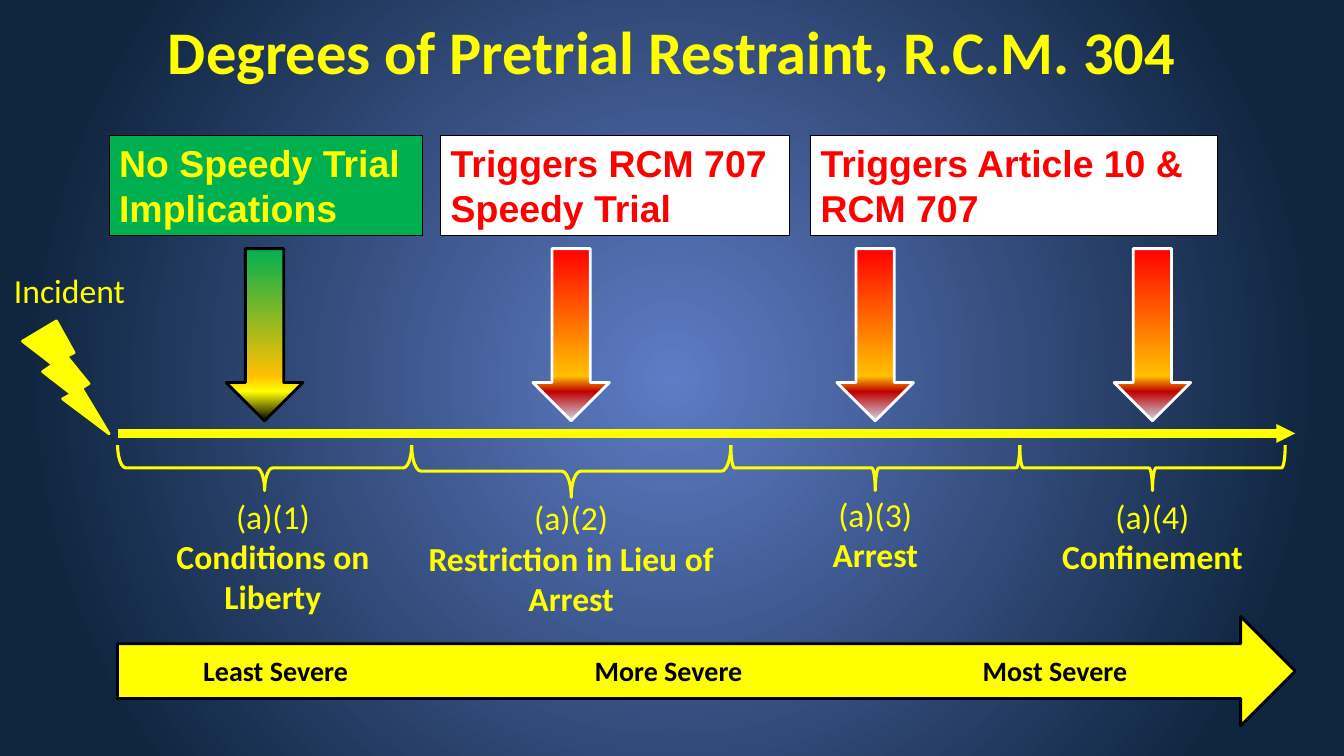
from collections import namedtuple

from lxml import etree
from pptx import Presentation
from pptx import util as u
from pptx.dml import color
from pptx.enum import shapes, text
from pptx.oxml import ns

COLUMNS, ROWS = 80, 45
CELL = u.Inches(1) // 6
YELLOW, BLACK, WHITE, RED, GREEN = "FFFF00", "000000", "FFFFFF", "FF0000", "00B050"
HOT = [(0, RED), (74, "FFC000"), (83, "C00000"), (100, "CAD9EB")]
CALM = [(0, GREEN), (74, "FFC000"), (83, YELLOW), (100, BLACK)]

Box = namedtuple("Box", "left top width height")
Trigger = namedtuple("Trigger", "lines left width fill ink")
Stage = namedtuple("Stage", "rule name start end depth curve shift label_top label_width stops edge")

TRIGGERS = [
    Trigger(["No Speedy Trial", "Implications"], 0, 18.66, GREEN, YELLOW),
    Trigger(["Triggers RCM 707", "Speedy Trial"], 19.74, 20.76, WHITE, RED),
    Trigger(["Triggers Article 10 &", "RCM 707"], 41.76, 24.24, WHITE, RED),
]
STAGES = [
    Stage("(a)(1)", "Conditions on Liberty", 0, 17.5, 2.7, 0.18, 0.5, 14.4, 15, CALM, BLACK),
    Stage("(a)(2)", "Restriction in Lieu of Arrest", 17.5, 36.5, 3.1, 0.18, 0, 14.5, 21, HOT, WHITE),
    Stage("(a)(3)", "Arrest", 36.5, 53.7, 2.7, 0.08, 0, 14.3, 12, HOT, WHITE),
    Stage("(a)(4)", "Confinement", 53.7, 69.5, 2.7, 0.08, 0, 14.4, 15, HOT, WHITE),
]


def rgb(value):
    """Turn a hex string into a colour."""
    return color.RGBColor.from_string(value)


def emu(*cells):
    """Turn grid cells into slide lengths."""
    return [round(cell * CELL) for cell in cells]


def inside(box, left, top, width, height):
    """Return a box placed relative to the corner of another."""
    return Box(box.left + left, box.top + top, width, height)


def gradient(owner, fill, stops, circle=False):
    """Fill with gradient stops, running downwards or out from the centre."""
    fill.gradient()
    grad = next(owner.element.iter(ns.qn("a:gradFill")))
    for child in list(grad):
        grad.remove(child)
    stop_list = etree.SubElement(grad, ns.qn("a:gsLst"))
    for position, value in stops:
        stop = etree.SubElement(stop_list, ns.qn("a:gs"), pos=str(position * 1000))
        etree.SubElement(stop, ns.qn("a:srgbClr"), val=value)
    if circle:
        route = etree.SubElement(grad, ns.qn("a:path"), path="circle")
        etree.SubElement(route, ns.qn("a:fillToRect"), l="50000", t="50000", r="50000", b="50000")
    else:
        etree.SubElement(grad, ns.qn("a:lin"), ang="5400000", scaled="0")


def write(frame, lines, size, ink, font="Calibri", bold=(True,), align="LEFT", anchor="TOP", tabs=()):
    """Write one paragraph per line; the last bold flag serves the remaining lines."""
    frame.word_wrap = True
    frame.auto_size = text.MSO_AUTO_SIZE.NONE
    frame.vertical_anchor = text.MSO_ANCHOR[anchor]
    for index, line in enumerate(lines):
        para = frame.paragraphs[0] if index == 0 else frame.add_paragraph()
        para.alignment = text.PP_ALIGN[align]
        if tabs:
            tab_list = etree.SubElement(para._p.get_or_add_pPr(), ns.qn("a:tabLst"))
            for tab in emu(*tabs):
                etree.SubElement(tab_list, ns.qn("a:tab"), pos=str(tab), algn="l")
        span = para.add_run()
        span.text = line
        span.font.name, span.font.size = font, u.Pt(size)
        span.font.bold = bold[min(index, len(bold) - 1)]
        span.font.color.rgb = rgb(ink)


def add_text(page, box, lines, size, ink, **style):
    """Add a text box."""
    write(page.shapes.add_textbox(*emu(*box)).text_frame, lines, size, ink, **style)


def add_preset(page, kind, box, edge, weight, fill=None, stops=None):
    """Add a preset shape with a solid, gradient or empty fill."""
    shape = page.shapes.add_shape(shapes.MSO_SHAPE[kind], *emu(*box))
    shape.shadow.inherit = False
    if stops:
        gradient(shape, shape.fill, stops)
    elif fill:
        shape.fill.solid()
        shape.fill.fore_color.rgb = rgb(fill)
    else:
        shape.fill.background()
    shape.line.color.rgb = rgb(edge)
    shape.line.width = u.Pt(weight)
    return shape


def add_line(page, start, end, row, weight, arrow=False):
    """Add a horizontal yellow line."""
    line = page.shapes.add_connector(shapes.MSO_CONNECTOR.STRAIGHT, *emu(start, row, end, row))
    line.line.color.rgb = rgb(YELLOW)
    line.line.width = u.Pt(weight)
    properties = line.element.spPr
    if arrow:
        etree.SubElement(properties.find(ns.qn("a:ln")), ns.qn("a:tailEnd"), type="triangle")
    etree.SubElement(properties, ns.qn("a:effectLst"))


def add_title(page, box):
    """Place and format the title."""
    title = page.shapes.title
    title.left, title.top, title.width, title.height = emu(*box)
    write(title.text_frame, ["Degrees of Pretrial Restraint, R.C.M. 304"], 43.2, YELLOW,
          align="CENTER", anchor="MIDDLE")


def add_triggers(page, box):
    """Add the row of trigger boxes."""
    for trigger in TRIGGERS:
        place = inside(box, trigger.left, 0, trigger.width, box.height)
        card = add_preset(page, "RECTANGLE", place, BLACK, 0.75, trigger.fill)
        write(card.text_frame, trigger.lines, 26.7, trigger.ink, font="Arial")


def add_incident(page, box):
    """Add the incident label above its lightning bolt."""
    add_text(page, inside(box, 0, 0, box.width, 3), ["Incident"], 24, YELLOW, bold=(False,))
    add_preset(page, "LIGHTNING_BOLT", inside(box, 1.1, 3.3, 5.16, 6.72), YELLOW, 2, YELLOW)


def add_brace(page, box, curve):
    """Add a brace that opens upwards and fills the box."""
    middle, row = box.left + box.width / 2, box.top + box.height / 2
    turned = Box(middle - box.height / 2, row - box.width / 2, box.height, box.width)
    brace = add_preset(page, "RIGHT_BRACE", turned, YELLOW, 2.25)
    brace.rotation = 90
    brace.adjustments[0] = curve


def add_stages(page, box):
    """Add the time line with an arrow, a brace and a label for each stage."""
    row = box.top + 11
    add_line(page, box.left + 8.76, box.left + box.width, row, 4.5, arrow=True)
    add_line(page, box.left, box.left + 69.5, row, 6)
    for stage in STAGES:
        middle = (stage.start + stage.end) / 2
        add_preset(page, "DOWN_ARROW", inside(box, middle - 2.28, 0, 4.56, 10.25),
                   stage.edge, 2, stops=stage.stops)
        add_brace(page, inside(box, stage.start, 11.7, stage.end - stage.start, stage.depth), stage.curve)
        left = middle + stage.shift - stage.label_width / 2
        add_text(page, inside(box, left, stage.label_top, stage.label_width, 7.8),
                 [stage.rule, stage.name], 24, YELLOW, bold=(False, True), align="CENTER")


def add_severity(page, box):
    """Add the severity arrow and its scale."""
    add_preset(page, "RIGHT_ARROW", box, BLACK, 2, YELLOW)
    add_text(page, inside(box, 4.5, 1.88, 63.5, 2.64), ["Least Severe\tMore Severe\tMost Severe"],
             20, BLACK, tabs=(23.3, 46.4))


def main():
    """Build the slide and save it."""
    deck = Presentation()
    deck.slide_width, deck.slide_height = emu(COLUMNS, ROWS)
    page = deck.slides.add_slide(deck.slide_layouts.get_by_name("Title Only"))
    gradient(page, page.background.fill, [(0, "5E7CC5"), (85, "0F243E")], circle=True)
    add_title(page, Box(4, 0.5, 72, 5))
    add_triggers(page, Box(6.5, 8.04, 66, 6))
    add_incident(page, Box(0.24, 15.8, 8.34, 10))
    add_stages(page, Box(7, 14.8, 70.1, 22))
    add_severity(page, Box(7, 36.7, 70.1, 6.5))
    deck.save("out.pptx")


if __name__ == "__main__":
    main()
